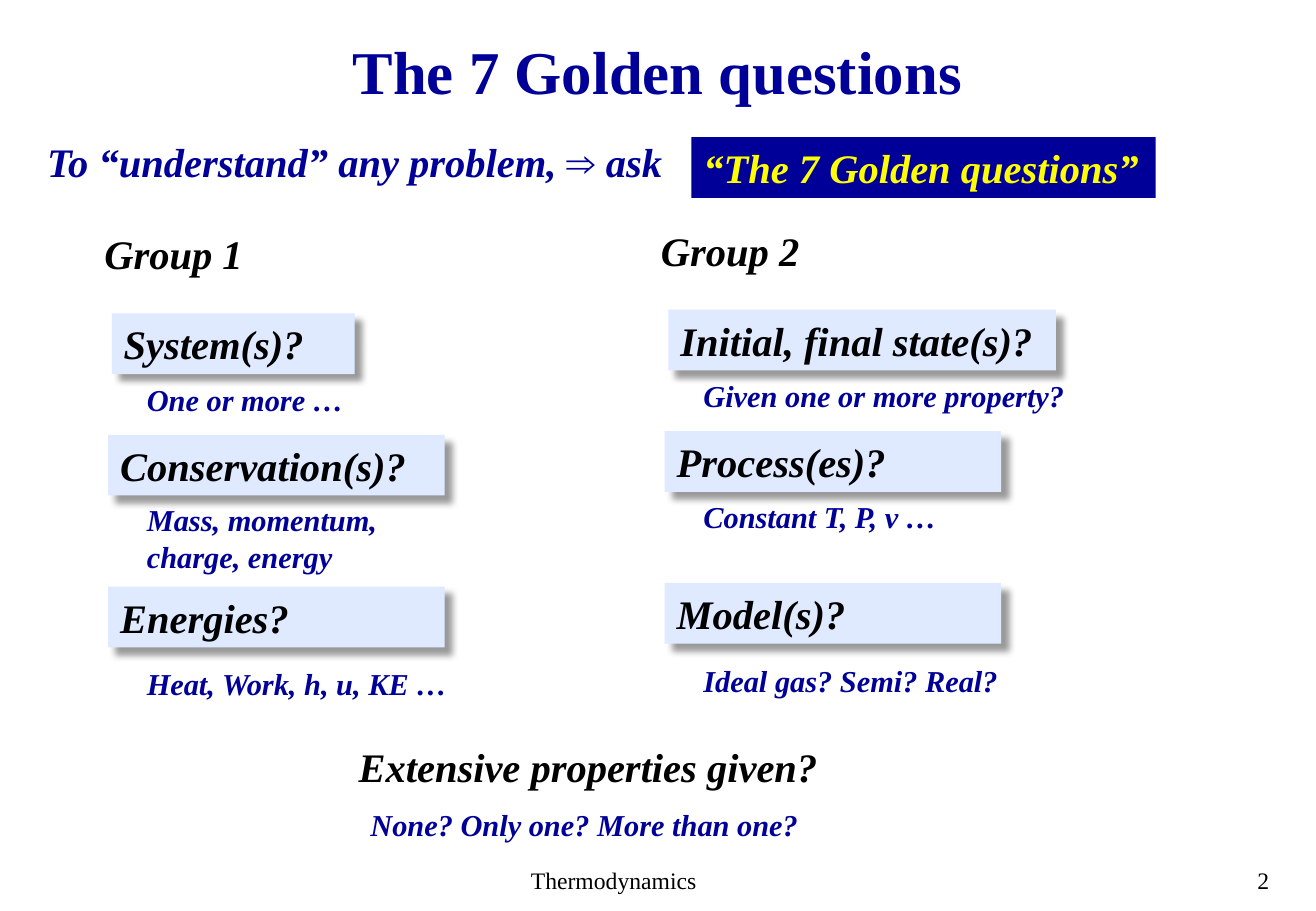
from dataclasses import dataclass

from lxml.etree import SubElement
from pptx import Presentation
from pptx.dml.color import RGBColor
from pptx.enum.shapes import MSO_SHAPE
from pptx.enum.text import MSO_ANCHOR, PP_ALIGN
from pptx.oxml.ns import qn
from pptx.util import Inches, Pt


@dataclass(frozen=True)
class Theme:
    font: str = "Times New Roman"
    navy: str = "000099"
    yellow: str = "FFFF00"
    black: str = "000000"
    white: str = "FFFFFF"
    pale: str = "DFE9FF"
    title: int = 36
    question: int = 24
    hint: int = 18
    footer: int = 14


THEME = Theme()

TITLE = "The 7 Golden questions"
LEAD = [("To “understand” any problem, ", True), ("⇒ ", False), ("ask", True)]
BANNER = "“The 7 Golden questions”"
GROUPS = [
    {
        "name": "Group 1", "left": 0.76, "top": 1.84, "width": 3.15,
        "questions": [
            ("System(s)?", 2.0, ["One or more …"], 1.84),
            ("Conservation(s)?", 2.77, ["Mass, momentum,", "charge, energy"], 2.18),
            ("Energies?", 2.77, ["Heat, Work, h, u, KE …"], 2.7),
        ],
    },
    {
        "name": "Group 2", "left": 5.34, "top": 1.81, "width": 3.6,
        "questions": [
            ("Initial, final state(s)?", 3.19, ["Given one or more property?"], 3.2),
            ("Process(es)?", 2.77, ["Constant T, P, v …"], 2.14),
            ("Model(s)?", 2.77, ["Ideal gas? Semi? Real?"], 2.65),
        ],
    },
]
QUESTION_OFFSETS = [(0.16, 0.74), (0.13, 1.74), (0.13, 2.99)]
HINT_LEFT = 0.35
HINT_TOPS = [1.25, 2.24, 3.59]
GROUP_HEIGHT, QUESTION_HEIGHT, HINT_HEIGHT, LINE_HEIGHT = 4.1, 0.5, 0.4, 0.31
LAST_QUESTION = "Extensive properties given?"
LAST_HINT = "None? Only one? More than one?"
FOOTERS = [("Thermodynamics", 4.27, 1.58), ("2", 10.25, 0.43)]


def write(shape, lines, size, color, bold=True, wrap=False,
          align=PP_ALIGN.LEFT, anchor=MSO_ANCHOR.TOP):
    frame = shape.text_frame
    frame.word_wrap = wrap
    frame.vertical_anchor = anchor
    for index, line in enumerate(lines):
        paragraph = frame.add_paragraph() if index else frame.paragraphs[0]
        paragraph.alignment = align
        for text, italic in line:
            run = paragraph.add_run()
            run.text = text
            run.font.name = THEME.font
            run.font.size = Pt(size)
            run.font.bold = bold
            run.font.italic = italic
            run.font.color.rgb = RGBColor.from_string(color)


def add_label(slide, box, lines, size, color, **style):
    label = slide.shapes.add_textbox(*map(Inches, box))
    write(label, lines, size, color, **style)


def add_panel(slide, box, text, fill, color=THEME.black, **style):
    panel = slide.shapes.add_shape(MSO_SHAPE.RECTANGLE, *map(Inches, box))
    panel.shadow.inherit = False
    panel.fill.solid()
    panel.fill.fore_color.rgb = RGBColor.from_string(fill)
    panel.line.fill.background()
    write(panel, [[(text, True)]], THEME.question, color, **style)
    return panel


def cast_shadow(shape):
    effects = shape._element.spPr.find(qn("a:effectLst"))
    shadow = SubElement(effects, qn("a:outerShdw"), blurRad=str(Pt(4)),
                        dist=str(Pt(6)), dir=str(45 * 60000),
                        algn="tl", rotWithShape="0")
    color = SubElement(shadow, qn("a:srgbClr"), val=THEME.black)
    SubElement(color, qn("a:alpha"), val="40000")


def add_group(slide, group):
    left, top = group["left"], group["top"]
    add_panel(slide, (left, top, group["width"], GROUP_HEIGHT),
              group["name"], THEME.white, wrap=True)
    rows = zip(group["questions"], QUESTION_OFFSETS, HINT_TOPS)
    for (question, width, hints, hint_width), (across, down), hint_top in rows:
        panel = add_panel(slide, (left + across, top + down, width, QUESTION_HEIGHT),
                          question, THEME.pale, wrap=True)
        cast_shadow(panel)
        height = HINT_HEIGHT + LINE_HEIGHT * (len(hints) - 1)
        add_label(slide, (left + HINT_LEFT, top + hint_top, hint_width, height),
                  [[(hint, True)] for hint in hints], THEME.hint, THEME.navy)


def main():
    presentation = Presentation()
    presentation.slide_width = Inches(10.83)
    presentation.slide_height = Inches(7.5)
    slide = presentation.slides.add_slide(presentation.slide_layouts[5])

    title = slide.shapes.title
    title.left, title.top, title.width, title.height = map(
        Inches, (2.78, 0.3, 5.26, 0.64))
    write(title, [[(TITLE, False)]], THEME.title, THEME.navy,
          align=PP_ALIGN.CENTER, anchor=MSO_ANCHOR.MIDDLE)
    title.text_frame.paragraphs[0].line_spacing = 0.9

    add_label(slide, (0.29, 1.08, 5.4, 0.5), [LEAD], THEME.question, THEME.navy)
    add_panel(slide, (5.69, 1.13, 3.82, 0.5), BANNER, THEME.navy, THEME.yellow)
    for group in GROUPS:
        add_group(slide, group)
    add_panel(slide, (2.54, 6.06, 4.6, 0.5), LAST_QUESTION, THEME.white,
              wrap=True, align=PP_ALIGN.CENTER)
    add_label(slide, (2.95, 6.59, 3.76, 0.4), [[(LAST_HINT, True)]],
              THEME.hint, THEME.navy)
    for text, left, width in FOOTERS:
        add_label(slide, (left, 7.08, width, 0.34), [[(text, False)]],
                  THEME.footer, THEME.black, bold=False)

    presentation.save("out.pptx")


if __name__ == "__main__":
    main()
